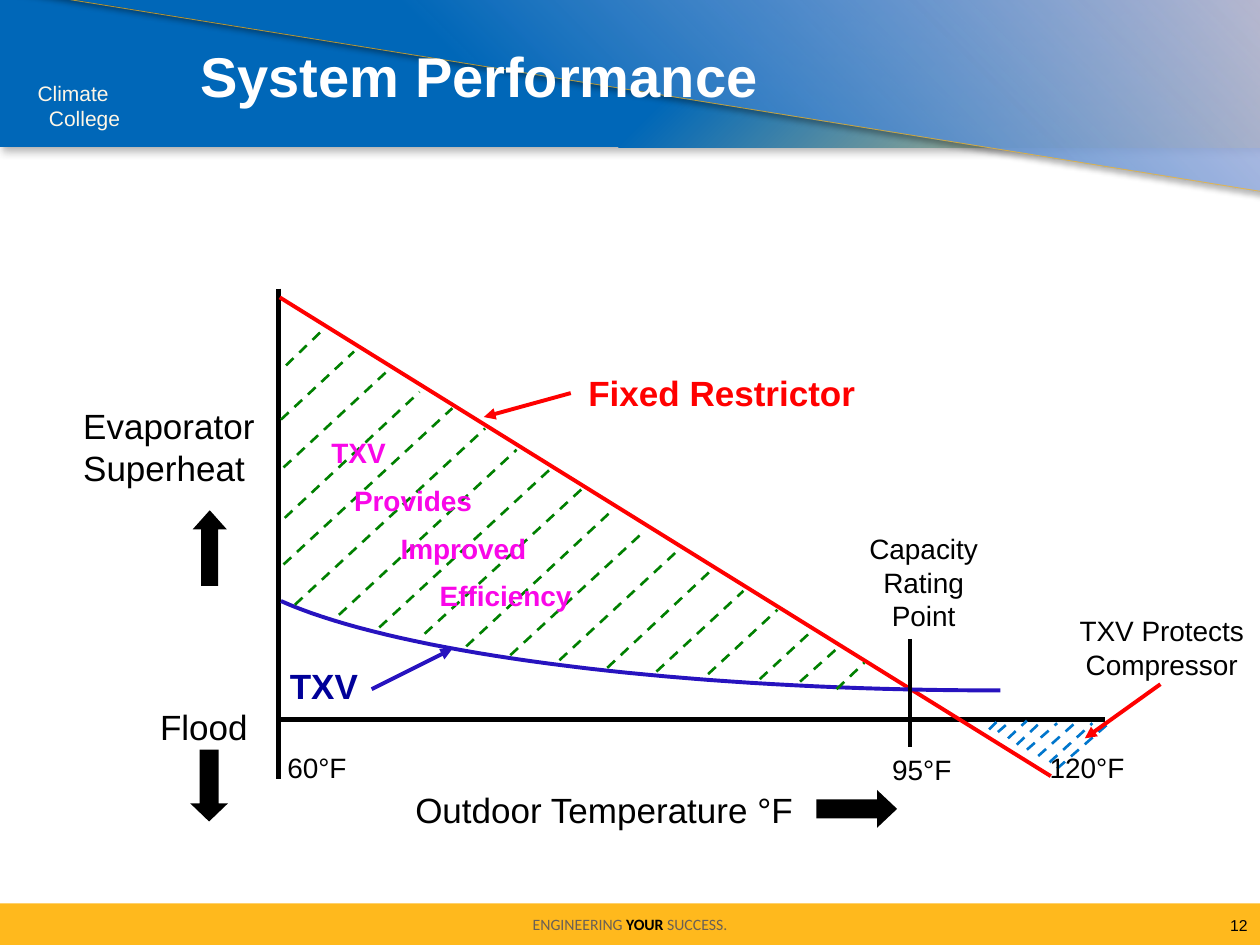
from lxml import etree
from pptx import Presentation
from pptx.dml.color import RGBColor
from pptx.enum.dml import MSO_LINE
from pptx.enum.shapes import MSO_CONNECTOR, MSO_SHAPE
from pptx.enum.text import MSO_ANCHOR, MSO_AUTO_SIZE, PP_ALIGN
from pptx.oxml import parse_xml
from pptx.oxml.ns import nsdecls, qn
from pptx.util import Inches, Pt

STRAIGHT = MSO_CONNECTOR.STRAIGHT
DASH = MSO_LINE.DASH
LEFT, CENTER, RIGHT = PP_ALIGN.LEFT, PP_ALIGN.CENTER, PP_ALIGN.RIGHT
TOP, MIDDLE = MSO_ANCHOR.TOP, MSO_ANCHOR.MIDDLE

BLACK = RGBColor(0x00, 0x00, 0x00)
WHITE = RGBColor(0xFF, 0xFF, 0xFF)
CREAM = RGBColor(0xFF, 0xF7, 0xE6)
AMBER = RGBColor(0xFF, 0xB9, 0x1D)
GOLD = RGBColor(0xFF, 0xB7, 0x17)
GREY = RGBColor(0x6A, 0x60, 0x55)
RED = RGBColor(0xFE, 0x00, 0x00)
LABEL_RED = RGBColor(0xFF, 0x00, 0x00)
INDIGO = RGBColor(0x27, 0x13, 0xBF)
NAVY = RGBColor(0x00, 0x00, 0x99)
MAGENTA = RGBColor(0xF9, 0x07, 0xE8)
GREEN = RGBColor(0x00, 0x80, 0x00)
FLOOD_BLUE = RGBColor(0x00, 0x76, 0xCC)

PLAIN_INSETS = (0.1, 0.05, 0.1, 0.05)
LABEL_INSETS = (0.3, 0.15, 0.1, 0.05)

# Hatching between the two curves: lower end, upper end
EFFICIENCY_HATCH = [
    (2.27, 2.9, 2.55, 2.63), (2.23, 3.33, 2.81, 2.79), (2.25, 3.71, 3.09, 2.93),
    (2.26, 4.11, 3.33, 3.11), (2.25, 4.48, 3.59, 3.24), (2.34, 4.8, 3.85, 3.4),
    (2.69, 4.88, 4.1, 3.57), (3.01, 4.98, 4.36, 3.73), (3.37, 5.03, 4.63, 3.87),
    (3.7, 5.13, 4.86, 4.05), (4.05, 5.2, 5.12, 4.21), (4.44, 5.24, 5.39, 4.36),
    (4.82, 5.3, 5.63, 4.54), (5.21, 5.33, 5.9, 4.69), (5.62, 5.35, 6.17, 4.84),
    (6.03, 5.39, 6.43, 5.02), (6.35, 5.41, 6.64, 5.15), (6.64, 5.47, 6.86, 5.26),
]
FLOOD_HATCH = [
    (7.85, 5.79, 7.92, 5.72), (7.92, 5.81, 8, 5.74), (8, 5.86, 8.15, 5.72),
    (8.07, 5.91, 8.25, 5.74), (8.15, 5.95, 8.39, 5.74), (8.24, 6, 8.53, 5.74),
    (8.33, 6.05, 8.67, 5.74), (8.39, 6.1, 8.8, 5.74),
]
TXV_CURVE = [(2.23, 4.77), (3.19, 5.2), (5.44, 5.48), (7.94, 5.48)]

# Text, box, size, colour, bold, alignment
LABELS = [
    ("Outdoor Temperature °F", (2.63, 6.11, 4.13, 0.53), 20, BLACK, False, CENTER),
    ("95°F", (6.78, 5.82, 0.88, 0.47), 16, BLACK, False, LEFT),
    ("60°F", (1.98, 5.81, 0.88, 0.47), 16, BLACK, False, LEFT),
    ("120°F", (8.03, 5.81, 1.07, 0.47), 16, BLACK, False, LEFT),
    ("Evaporator Superheat", (0.36, 3.06, 2.09, 0.87), 20, BLACK, False, LEFT),
    ("Flood", (0.97, 5.45, 1.89, 0.53), 20, BLACK, False, LEFT),
    ("Capacity Rating Point", (6.5, 4.07, 1.46, 1.01), 16, BLACK, False, CENTER),
    ("Fixed Restrictor", (4.37, 2.8, 2.94, 0.53), 20, LABEL_RED, True, LEFT),
    ("TXV", (2, 5.12, 1.14, 0.53), 20, NAVY, True, LEFT),
    ("TXV Protects Compressor", (8.24, 4.72, 1.76, 0.74), 16, BLACK, False, CENTER),
]


def set_font(font, color, **values):
    font.color.rgb = color
    for name, value in {"name": "Arial", "bold": False, **values}.items():
        setattr(font, name, value)


def set_frame(frame, insets=PLAIN_INSETS, anchor=TOP, wrap=True):
    values = dict(zip(("margin_left", "margin_top", "margin_right", "margin_bottom"),
                      map(Inches, insets)))
    values.update(vertical_anchor=anchor, word_wrap=wrap, auto_size=MSO_AUTO_SIZE.NONE)
    for name, value in values.items():
        setattr(frame, name, value)


def add_label(slide, lines, box, size, color, bold=False, alignment=LEFT,
              insets=LABEL_INSETS, anchor=TOP, indents=(0,), space_before=0):
    """Add a text box with one paragraph per line, each with its own indent in inches."""
    frame = slide.shapes.add_textbox(*map(Inches, box)).text_frame
    set_frame(frame, insets, anchor)
    frame.text = "\n".join(lines)
    for index, (paragraph, indent) in enumerate(zip(frame.paragraphs, indents)):
        paragraph.alignment = alignment
        set_font(paragraph.font, color, size=Pt(size), bold=bold)
        if indent:
            properties = paragraph._p.get_or_add_pPr()
            properties.set("marL", str(Inches(indent)))
            properties.set("indent", "0")
        if index:
            paragraph.space_before = Pt(space_before)


def add_line(slide, ends, color, width, dash=None, arrow=False):
    line = slide.shapes.add_connector(STRAIGHT, *map(Inches, ends))
    line.line.color.rgb = color
    line.line.width = Pt(width)
    if dash:
        line.line.dash_style = dash
    if arrow:
        etree.SubElement(line.line._get_or_add_ln(), qn("a:tailEnd"), type="triangle")
    etree.SubElement(line._element.spPr, qn("a:effectLst"))


def add_block(slide, preset, box, color=None, adjustments=()):
    shape = slide.shapes.add_shape(preset, *map(Inches, box))
    shape.shadow.inherit = False
    shape.line.fill.background()
    if color is not None:
        shape.fill.solid()
        shape.fill.fore_color.rgb = color
    for index, value in enumerate(adjustments):
        shape.adjustments[index] = value
    return shape


def color_xml(color, alpha=100):
    return f'<a:srgbClr val="{color}"><a:alpha val="{alpha * 1000}"/></a:srgbClr>'


def set_gradient(shape, stops):
    """Fill along 45 degrees with stops of (position, colour, opacity), in percent."""
    stops_xml = "".join(f'<a:gs pos="{position * 1000}">{color_xml(color, alpha)}</a:gs>'
                        for position, color, alpha in stops)
    gradient = parse_xml(f'<a:gradFill {nsdecls("a")} rotWithShape="1"><a:gsLst>{stops_xml}'
                         '</a:gsLst><a:lin ang="2700000" scaled="0"/></a:gradFill>')
    shape._element.spPr.find(qn("a:prstGeom")).addnext(gradient)


def set_shadow(shape, color, alpha, blur, distance, angle):
    effects = shape._element.spPr.find(qn("a:effectLst"))
    effects.append(parse_xml(
        f'<a:outerShdw {nsdecls("a")} blurRad="{Pt(blur)}" dist="{Pt(distance)}" '
        f'dir="{angle * 60000}" algn="tl" rotWithShape="0">'
        f'{color_xml(color, alpha)}</a:outerShdw>'))


def add_header(slide):
    band = add_block(slide, MSO_SHAPE.RECTANGLE, (-0.02, 0, 10.05, 1.17))
    set_gradient(band, [(54, "0067B8", 100), (100, "FFD577", 100)])
    set_shadow(band, "999999", 75, 5, 3, 45)

    wedge = add_block(slide, MSO_SHAPE.ISOSCELES_TRIANGLE, (4.23, -4.34, 1.63, 10.12),
                      adjustments=(1,))
    wedge.rotation = 270
    set_gradient(wedge, [(40, "0067B8", 100), (98, "C3C8F8", 72)])
    wedge.line.color.rgb = GOLD
    wedge.line.width = Pt(0.5)
    line_color = wedge._element.spPr.find(".//" + qn("a:ln")).find(".//" + qn("a:srgbClr"))
    etree.SubElement(line_color, qn("a:alpha"), val="68000")
    set_shadow(wedge, "000000", 35, 3.1, 1.8, 90)

    add_label(slide, ["Climate", "College"], (0.2, 0.59, 0.9, 0.5), 12, CREAM,
              insets=PLAIN_INSETS, indents=(0, 0.09))


def add_footer(slide):
    band = add_block(slide, MSO_SHAPE.RECTANGLE, (0, 7.17, 10, 0.33), AMBER)
    set_frame(band.text_frame, anchor=MIDDLE, wrap=False)
    paragraph = band.text_frame.paragraphs[0]
    paragraph.alignment = CENTER
    for text, color, bold in [("ENGINEERING ", GREY, False), ("YOUR ", BLACK, True),
                              ("SUCCESS.", GREY, False)]:
        run = paragraph.add_run()
        run.text = text
        set_font(run.font, color, name="Calibri", size=Pt(9), bold=bold)
    add_label(slide, ["12"], (8.76, 7.18, 1.24, 0.32), 9, BLACK, alignment=RIGHT,
              insets=PLAIN_INSETS, anchor=MIDDLE)


def place_title(slide):
    title = slide.shapes.title
    title.left, title.top, title.width, title.height = map(Inches, (1.49, 0.03, 8.18, 1.14))
    set_frame(title.text_frame, anchor=MIDDLE)
    title.text_frame.text = "System Performance"
    paragraph = title.text_frame.paragraphs[0]
    paragraph.alignment = LEFT
    set_font(paragraph.font, WHITE, size=Pt(32), bold=True)
    slide.shapes._spTree.append(title._element)  # in front of the header


def add_curve(slide, controls, color, width, steps=40):
    """Draw a cubic Bezier curve as an open outline of short segments."""
    points = []
    for step in range(steps + 1):
        t = step / steps
        weights = ((1 - t) ** 3, 3 * t * (1 - t) ** 2, 3 * t ** 2 * (1 - t), t ** 3)
        points.append(tuple(
            Inches(sum(weight * value for weight, value in zip(weights, axis)))
            for axis in zip(*controls)))
    builder = slide.shapes.build_freeform(*points[0])
    builder.add_line_segments(points[1:], close=False)
    curve = builder.convert_to_shape()
    curve.shadow.inherit = False
    curve.fill.background()
    curve.line.color.rgb = color
    curve.line.width = Pt(width)


def add_diagram(slide):
    add_line(slide, (2.21, 2.29, 2.21, 6.18), BLACK, 3)
    add_line(slide, (2.21, 5.71, 8.77, 5.71), BLACK, 3)
    add_line(slide, (2.22, 2.36, 8.34, 6.16), RED, 2.25)
    add_curve(slide, TXV_CURVE, INDIGO, 2.25)
    add_line(slide, (7.22, 5.07, 7.22, 5.93), BLACK, 2.25)
    add_line(slide, (7.23, 5.48, 7.21, 5.46), BLACK, 0.75)
    for hatch, color in [(FLOOD_HATCH, FLOOD_BLUE), (EFFICIENCY_HATCH, GREEN)]:
        for ends in hatch:
            add_line(slide, ends, color, 1.5, dash=DASH)
    for ends, color in [((4.53, 3.12, 3.84, 3.31), RED), ((2.95, 5.47, 3.59, 5.15), INDIGO),
                        ((9.21, 5.43, 8.61, 5.86), RED)]:
        add_line(slide, ends, color, 2.25, arrow=True)
    for preset, box, head in [(MSO_SHAPE.UP_ARROW, (1.53, 4.05, 0.27, 0.6), 0.56),
                              (MSO_SHAPE.DOWN_ARROW, (1.51, 5.95, 0.3, 0.57), 0.48),
                              (MSO_SHAPE.RIGHT_ARROW, (6.48, 6.27, 0.64, 0.3), 0.53)]:
        add_block(slide, preset, box, BLACK, (0.5, head))
    for text, *values in LABELS:
        add_label(slide, [text], *values)
    add_label(slide, ["TXV", "Provides", "Improved", "Efficiency"], (2.33, 3.31, 2.52, 1.68),
              16, MAGENTA, True, indents=(0, 0.18, 0.55, 0.86), space_before=8)


def main():
    presentation = Presentation()
    presentation.slide_width, presentation.slide_height = Inches(10), Inches(7.5)
    slide = presentation.slides.add_slide(presentation.slide_layouts[5])
    add_header(slide)
    add_footer(slide)
    place_title(slide)
    add_diagram(slide)
    presentation.save("out.pptx")


if __name__ == "__main__":
    main()
